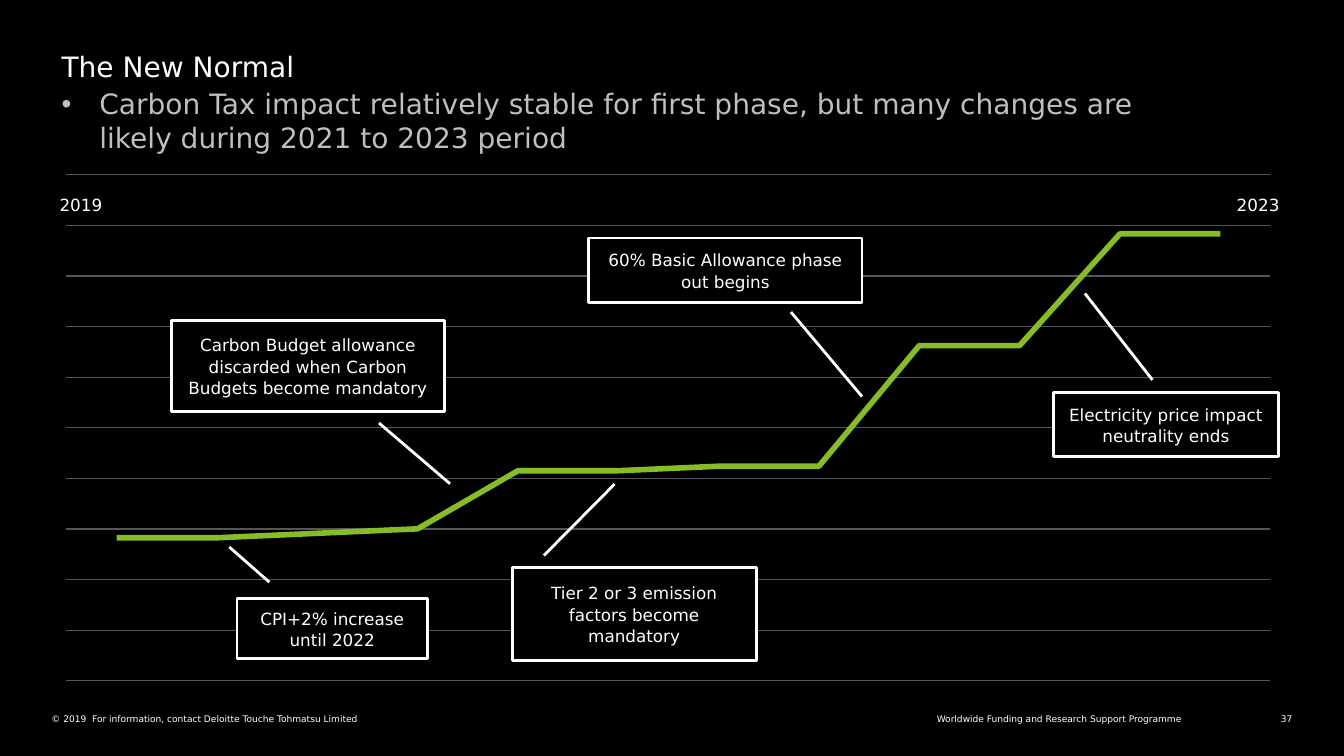
"""Build the carbon tax outlook slide: a stepped line chart with callouts."""
from dataclasses import dataclass

from lxml.etree import SubElement
from pptx import Presentation
from pptx.chart.data import CategoryChartData
from pptx.dml.color import RGBColor
from pptx.enum.chart import XL_CHART_TYPE
from pptx.enum.shapes import MSO_SHAPE
from pptx.enum.text import MSO_ANCHOR, MSO_AUTO_SIZE, PP_ALIGN
from pptx.oxml import parse_xml
from pptx.oxml.ns import nsdecls, qn
from pptx.util import Inches, Pt


@dataclass(frozen=True)
class Theme:
    font: str = "DejaVu Sans"
    black: str = "000000"
    white: str = "FFFFFF"
    muted: str = "BFBFBF"
    grid: str = "53565A"
    green: str = "86BC25"
    heading: float = 20
    label: float = 12
    chart: float = 10
    footer: float = 6.5


THEME = Theme()
SLIDE_WIDTH, SLIDE_HEIGHT = Inches(13.33), Inches(7.5)

TITLE = ("The New Normal", (3.83, 5.87, 92.35, 4.93), THEME.white)
SUBTITLE = (
    "Carbon Tax impact relatively stable for first phase, but many changes are likely during 2021 to 2023 period",
    (3.83, 10.8, 85.37, 11.07),
    THEME.muted,
)
CHART_AREA = (3.08, 21.73, 93.32, 69.73)
PLOT_LAYOUT = {"x": 0.02, "y": 0.02, "w": 0.96, "h": 0.96}
TAX_VALUES = [32, 32, 33, 34, 47, 47, 48, 48, 75, 75, 100, 100]
AXIS_TOP, GRID_ROWS = 113.2, 10

CALLOUTS = [
    ("CPI+2% increase until 2022", (17.63, 79.2, 14.18, 7.87), (-0.28, 0.17, -0.87, -0.04)),
    ("Tier 2 or 3 emission factors become mandatory", (38.11, 75.07, 18.15, 12.27), (-0.13, 0.13, -0.9, 0.42)),
    ("Electricity price impact neutrality ends", (78.39, 51.87, 16.73, 8.53), (-0.19, 0.44, -1.53, 0.14)),
    (
        "Carbon Budget allowance discarded when Carbon Budgets become mandatory",
        (12.75, 42.4, 20.33, 12),
        (1.13, 0.76, 1.8, 1.02),
    ),
    ("60% Basic Allowance phase out begins", (43.81, 31.47, 20.33, 8.53), (1.15, 0.74, 2.46, 1)),
]
LABELS = [
    ("2019", (4.43, 25.73, 6.53, 2.67), PP_ALIGN.LEFT, THEME.label),
    ("2023", (88.67, 25.73, 6.53, 2.67), PP_ALIGN.RIGHT, THEME.label),
    (
        "© 2019  For information, contact Deloitte Touche Tohmatsu Limited",
        (3.83, 94.4, 43.96, 1.47),
        PP_ALIGN.LEFT,
        THEME.footer,
    ),
    (
        "Worldwide Funding and Research Support Programme",
        (47.79, 94.4, 40.14, 1.47),
        PP_ALIGN.RIGHT,
        THEME.footer,
    ),
    ("37", (93.62, 94.4, 2.55, 1.47), PP_ALIGN.RIGHT, THEME.footer),
]


def place(area):
    """Turn percentages of the slide into left, top, width and height."""
    sizes = (SLIDE_WIDTH, SLIDE_HEIGHT) * 2
    return [int(share * size / 100) for share, size in zip(area, sizes)]


def color(value):
    return RGBColor.from_string(value)


def style_font(font, size, value):
    font.name, font.size = THEME.font, Pt(size)
    font.color.rgb = color(value)


def write(box, text, align, size, value, anchor=MSO_ANCHOR.TOP, inset=None):
    frame = box.text_frame
    frame.text = text
    frame.word_wrap = True
    frame.auto_size = MSO_AUTO_SIZE.NONE
    frame.vertical_anchor = anchor
    if inset is not None:
        frame.margin_left = frame.margin_right = Inches(inset)
        frame.margin_top = frame.margin_bottom = Inches(inset)
    para = frame.paragraphs[0]
    para.alignment = align
    para.space_before = Pt(0)
    style_font(para.font, size, value)
    return para


def fill_heading(placeholder, content):
    text, area, value = content
    placeholder.left, placeholder.top, placeholder.width, placeholder.height = place(area)
    properties = placeholder.text_frame.paragraphs[0]._p.get_or_add_pPr()
    properties.set("marL", "0")
    properties.set("indent", "0")
    SubElement(properties, qn("a:buNone"))
    write(placeholder, text, PP_ALIGN.LEFT, THEME.heading, value)


def clear_fill():
    return parse_xml(
        f'<c:spPr {nsdecls("c", "a")}><a:noFill/><a:ln><a:noFill/></a:ln></c:spPr>'
    )


def add_tax_chart(slide):
    data = CategoryChartData(number_format='"R"#,##0_);[Red]\\("R"#,##0\\)')
    data.categories = [str(number) for number in range(1, len(TAX_VALUES) + 1)]
    data.add_series("Series 1", TAX_VALUES)
    chart = slide.shapes.add_chart(XL_CHART_TYPE.LINE, *place(CHART_AREA), data).chart
    chart.has_legend = chart.has_title = False
    style_font(chart.font, THEME.chart, THEME.black)

    axis = chart.value_axis
    axis.minimum_scale, axis.maximum_scale = 0, AXIS_TOP
    axis.major_unit = AXIS_TOP / GRID_ROWS
    axis.has_major_gridlines = True
    grid_line = axis.major_gridlines.format.line
    grid_line.color.rgb, grid_line.width = color(THEME.grid), Pt(0.75)
    axis.visible = chart.category_axis.visible = False

    chart.plots[0].vary_by_categories = False
    series = chart.plots[0].series[0]
    series.smooth = False
    series.format.line.color.rgb, series.format.line.width = color(THEME.green), Pt(4)
    SubElement(series.format.line._get_or_add_ln(), qn("a:round"))

    plot_area = chart._chartSpace.chart.plotArea
    for old_layout in plot_area.findall(qn("c:layout")):
        plot_area.remove(old_layout)
    modes = '<c:layoutTarget val="inner"/><c:xMode val="edge"/><c:yMode val="edge"/>'
    shares = "".join(f'<c:{side} val="{share}"/>' for side, share in PLOT_LAYOUT.items())
    plot_area.insert(0, parse_xml(
        f'<c:layout {nsdecls("c")}><c:manualLayout>{modes}{shares}</c:manualLayout></c:layout>'
    ))
    plot_area.append(clear_fill())
    chart._chartSpace.chart.addnext(clear_fill())


def add_callout(slide, text, area, pointer):
    box = slide.shapes.add_shape(MSO_SHAPE.LINE_CALLOUT_1, *place(area))
    for index, share in enumerate(pointer):
        box.adjustments[index] = share
    box.shadow.inherit = False
    box.fill.solid()
    box.fill.fore_color.rgb = color(THEME.black)
    box.line.color.rgb, box.line.width = color(THEME.white), Pt(2)
    para = write(box, text, PP_ALIGN.CENTER, THEME.label, THEME.white, MSO_ANCHOR.MIDDLE, 0.1)
    para.line_spacing = 1.06


def main():
    deck = Presentation()
    deck.slide_width, deck.slide_height = SLIDE_WIDTH, SLIDE_HEIGHT
    slide = deck.slides.add_slide(deck.slide_layouts[1])
    slide.background.fill.solid()
    slide.background.fill.fore_color.rgb = color(THEME.black)
    fill_heading(slide.shapes.title, TITLE)
    fill_heading(slide.placeholders[1], SUBTITLE)
    add_tax_chart(slide)
    for callout in CALLOUTS:
        add_callout(slide, *callout)
    for text, area, align, size in LABELS:
        box = slide.shapes.add_textbox(*place(area))
        write(box, text, align, size, THEME.white, inset=0)
    deck.save("out.pptx")


if __name__ == "__main__":
    main()
